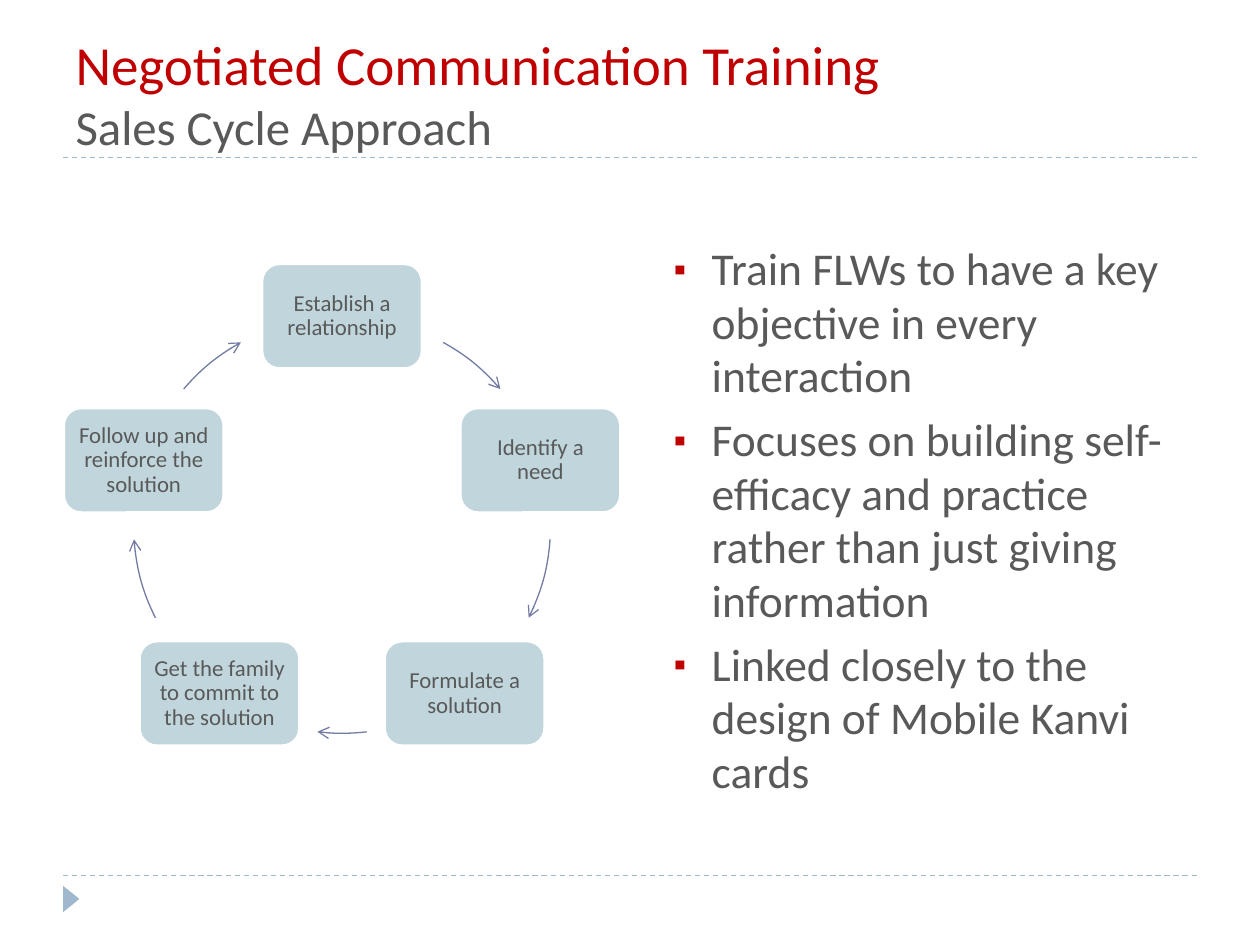
import math

from lxml import etree
from pptx import Presentation
from pptx import util as u
from pptx.dml.color import RGBColor
from pptx.enum import dml, shapes, text
from pptx.oxml import ns

PX = 9144
FONT = "Calibri"
RED = RGBColor(0xC0, 0x00, 0x00)
GREY = RGBColor(0x59, 0x59, 0x59)
PALE = RGBColor(0xC0, 0xD6, 0xDC)
BLUE = RGBColor(0x9F, 0xB8, 0xCD)
INDIGO = RGBColor(0x72, 0x7C, 0xA3)
WHITE = RGBColor(0xFF, 0xFF, 0xFF)

STEPS = [
    "Establish a relationship",
    "Identify a need",
    "Formulate a solution",
    "Get the family to commit to the solution",
    "Follow up and reinforce the solution",
]
ARCS = [(29, 49.4), (94, 116.5), (173.2, 186.8), (243.5, 266), (310.6, 331)]
POINTS = [
    "Train FLWs to have a key objective in every interaction",
    "Focuses on building self-efficacy and practice rather than just giving information",
    "Linked closely to the design of Mobile Kanvi cards",
]


def px(*lengths):
    return [u.Emu(round(length * PX)) for length in lengths]


def set_margins(frame, side, top, bottom):
    frame.margin_left, frame.margin_right, frame.margin_top, frame.margin_bottom = px(
        side, side, top, bottom)


def set_font(font, size, color):
    font.name = FONT
    font.size = u.Pt(size)
    font.color.rgb = color


def add_plain_shape(page, kind, left, top, width, height, fill=None):
    shape = page.shapes.add_shape(kind, *px(left, top, width, height))
    shape.shadow.inherit = False
    if fill is None:
        shape.fill.background()
    else:
        shape.fill.solid()
        shape.fill.fore_color.rgb = fill
    return shape


def add_rule(page, left, top, width):
    rule = page.shapes.add_connector(
        shapes.MSO_CONNECTOR.STRAIGHT, *px(left, top, left + width, top))
    rule.line.color.rgb = BLUE
    rule.line.width = u.Pt(0.75)
    rule.line.dash_style = dml.MSO_LINE.DASH
    etree.SubElement(rule.element.spPr, ns.qn("a:effectLst"))


def add_frame(page, left, top, width, height):
    add_rule(page, left, top + height, width)
    add_rule(page, left, top, width)
    marker = add_plain_shape(
        page, shapes.MSO_SHAPE.ISOSCELES_TRIANGLE, left - 4, top + height + 12, 21, 13, BLUE)
    marker.rotation = 90
    marker.line.fill.background()


def place_title(page, left, top, width, height):
    title = page.shapes.title
    title.left, title.top, title.width, title.height = px(left, top, width, height)
    frame = title.text_frame
    frame.word_wrap = True
    frame.auto_size = text.MSO_AUTO_SIZE.NONE
    frame.vertical_anchor = text.MSO_ANCHOR.BOTTOM
    set_margins(frame, 10, 2, 2)
    para = frame.paragraphs[0]
    para.alignment = text.PP_ALIGN.LEFT
    heading = para.add_run()
    heading.text = "Negotiated Communication Training"
    set_font(heading.font, 31.5, RED)
    para.add_line_break()
    subheading = para.add_run()
    subheading.text = "Sales Cycle Approach"
    set_font(subheading.font, 27.9, GREY)


def add_step(page, left, top, width, height, label):
    step = add_plain_shape(
        page, shapes.MSO_SHAPE.ROUNDED_RECTANGLE, left, top, width, height, PALE)
    step.line.color.rgb = WHITE
    step.line.width = u.Pt(1.5)
    frame = step.text_frame
    frame.word_wrap = True
    frame.vertical_anchor = text.MSO_ANCHOR.MIDDLE
    set_margins(frame, 5, 5, 5)
    para = frame.paragraphs[0]
    para.text = label
    para.alignment = text.PP_ALIGN.CENTER
    para.line_spacing = 0.9
    set_font(para.font, 13, GREY)


def add_arrow(page, left, top, size, start, end):
    arrow = add_plain_shape(page, shapes.MSO_SHAPE.ARC, left, top, size, size)
    for index, degrees in enumerate((start, end)):
        arrow.adjustments[index] = (degrees - 90) % 360 * 0.6
    arrow.line.color.rgb = INDIGO
    arrow.line.width = u.Pt(0.75)
    line = arrow.element.spPr.find(ns.qn("a:ln"))
    etree.SubElement(line, ns.qn("a:tailEnd"), type="arrow")


def add_cycle(page, left, top, size):
    width, height, radius = 127, 83, size / 2
    for index, (label, (start, end)) in enumerate(zip(STEPS, ARCS)):
        angle = math.radians(360 / len(STEPS) * index)
        x = left + radius + radius * math.sin(angle)
        y = top + radius - radius * math.cos(angle)
        add_step(page, x - width / 2, y - height / 2, width, height, label)
        add_arrow(page, left, top, size, start, end)


def add_bullet(para):
    props = para._p.get_or_add_pPr()
    props.set("marL", str(30 * PX))
    props.set("indent", str(-30 * PX))
    color = etree.SubElement(props, ns.qn("a:buClr"))
    etree.SubElement(color, ns.qn("a:srgbClr"), val=str(RED))
    etree.SubElement(props, ns.qn("a:buSzPct"), val="76000")
    etree.SubElement(props, ns.qn("a:buFont"), typeface=FONT)
    etree.SubElement(props, ns.qn("a:buChar"), char="▪")


def add_points(page, left, top, width, height):
    box = page.shapes.add_textbox(*px(left, top, width, height))
    frame = box.text_frame
    frame.word_wrap = True
    set_margins(frame, 10, 60, 5)
    for index, point in enumerate(POINTS):
        para = frame.add_paragraph() if index else frame.paragraphs[0]
        para.text = point
        add_bullet(para)
        para.line_spacing = 0.98
        para.space_before = u.Pt(6 if index else 0)
        set_font(para.font, 26, GREY)


def main():
    deck = Presentation()
    deck.slide_width, deck.slide_height = px(1000, 750)
    page = deck.slides.add_slide(deck.slide_layouts.get_by_name("Title Only"))
    add_frame(page, 50, 125, 900, 570)
    place_title(page, 50, 25, 900, 100)
    add_cycle(page, 106, 251, 331)
    add_points(page, 525, 133, 442, 540)
    deck.save("out.pptx")


if __name__ == "__main__":
    main()
